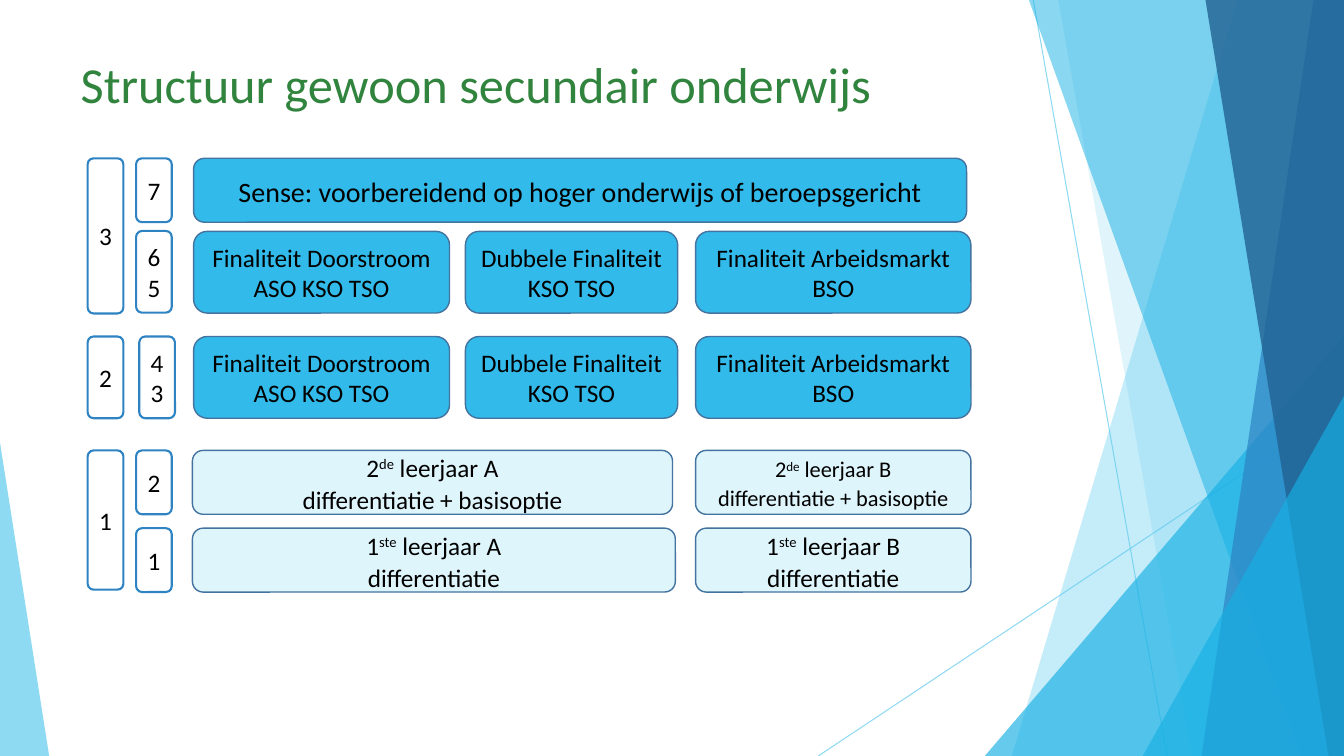
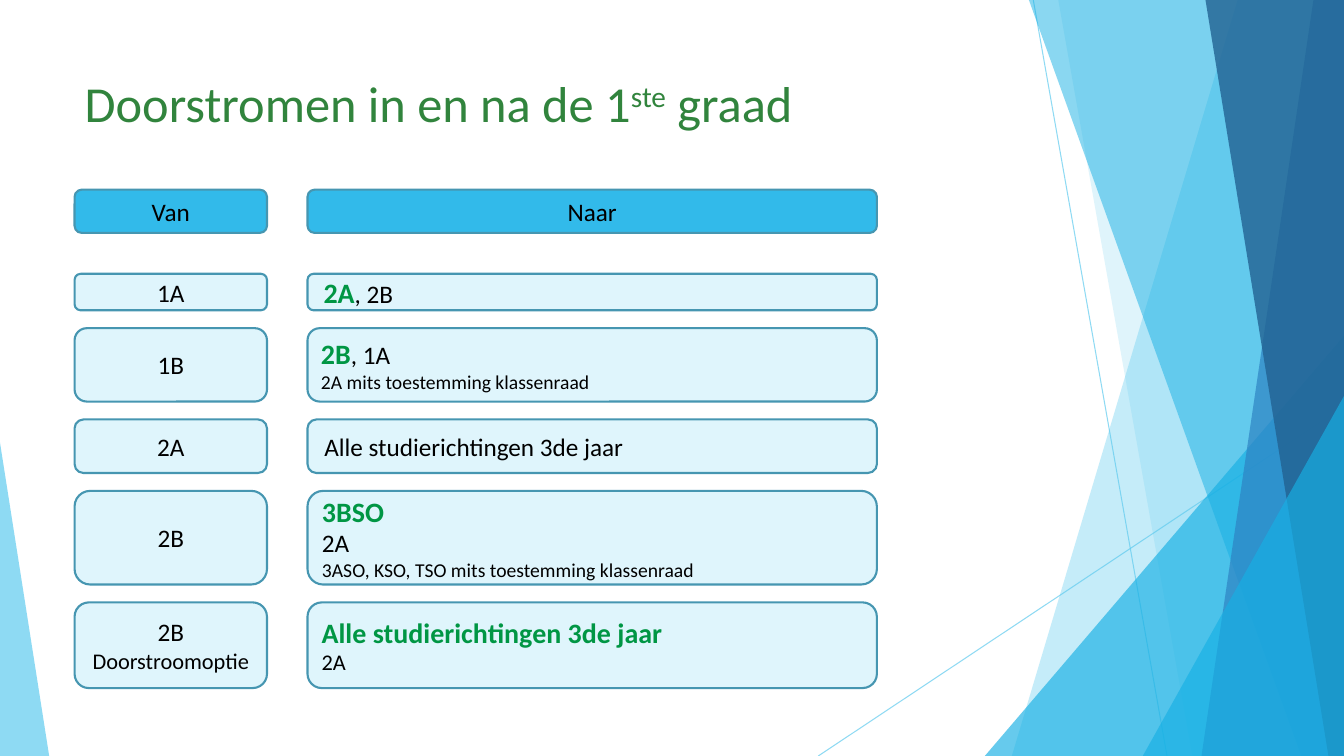
from lxml import etree
from pptx import Presentation
from pptx.dml.color import RGBColor
from pptx.enum.shapes import MSO_CONNECTOR, MSO_SHAPE
from pptx.enum.text import MSO_ANCHOR, PP_ALIGN
from pptx.oxml.ns import qn
from pptx.util import Cm, Pt

ROUND = MSO_SHAPE.ROUNDED_RECTANGLE
ALT = MSO_SHAPE.FLOWCHART_ALTERNATE_PROCESS
TRI = MSO_SHAPE.ISOSCELES_TRIANGLE
LINE = MSO_CONNECTOR.STRAIGHT
LEFT, MID = PP_ALIGN.LEFT, PP_ALIGN.CENTER
TOP, CENTRE = MSO_ANCHOR.TOP, MSO_ANCHOR.MIDDLE

FONT = "Calibri"
WIDE, HIGH = 33.87, 19.05  # slide size in cm

BLACK = RGBColor(0x00, 0x00, 0x00)
WHITE = RGBColor(0xFF, 0xFF, 0xFF)
MOSS = RGBColor(0x31, 0x84, 0x3D)
GREEN = RGBColor(0x00, 0x96, 0x44)
SKY = RGBColor(0x32, 0xBA, 0xEA)
PALE = RGBColor(0xDF, 0xF5, 0xFC)
SLATE = RGBColor(0x43, 0x73, 0x9E)
TEAL = RGBColor(0x46, 0x96, 0xB1)
BLUE = RGBColor(0x2E, 0x83, 0xC3)
AQUA = RGBColor(0x5F, 0xCB, 0xEF)
CYAN = RGBColor(0x17, 0xB0, 0xE4)
NAVY = RGBColor(0x22, 0x62, 0x92)

# Text styles: size, colour, bold
HEAD = (36, MOSS, False)
LEAD = (20, GREEN, True)
LARGE = (20, BLACK, False)
BODY = (18, BLACK, False)
SMALL = (16, BLACK, False)
NOTE = (14, BLACK, False)

# Box looks: fill, line colour, line width
STRONG = (SKY, SLATE, 1)
LIGHT = (PALE, SLATE, 1)
GRADE = (WHITE, BLUE, 1.5)
TITLE = (SKY, TEAL, 1.5)
CELL = (PALE, TEAL, 1.5)


# Text
def write(par, text, style):
    """Add text; ^ marks the start and end of a superscript."""
    size, colour, bold = style
    for i, part in enumerate(text.split("^")):
        for j, piece in enumerate(part.split("\n")):
            if j:
                par.add_line_break()
            run = par.add_run()
            run.text = piece
            font = run.font
            font.name, font.size, font.bold = FONT, Pt(size), bold
            font.color.rgb = colour
            if i % 2:
                font._element.set("baseline", "30000")


def fill(frame, lines, align=MID, space=None):
    """Each line is a list of (text, style) parts."""
    for i, line in enumerate(lines):
        par = frame.add_paragraph() if i else frame.paragraphs[0]
        par.alignment = align
        if space:
            par.line_spacing = space
        for text, style in line:
            write(par, text, style)


def head(slide, text, x, y, w, h):
    shape = slide.shapes.title
    shape.left, shape.top, shape.width, shape.height = map(Cm, (x, y, w, h))
    frame = shape.text_frame
    frame.vertical_anchor, frame.word_wrap = TOP, True
    fill(frame, [[(text, HEAD)]], LEFT)


# Boxes
def box(slide, spot, look, lines, kind=ROUND, align=MID, space=None):
    shape = slide.shapes.add_shape(kind, *map(Cm, spot))
    shape.shadow.inherit = False
    shape.fill.solid()
    shape.fill.fore_color.rgb, shape.line.color.rgb = look[:2]
    shape.line.width = Pt(look[2])
    frame = shape.text_frame
    frame.word_wrap, frame.vertical_anchor = True, CENTRE
    fill(frame, lines, align, space)
    return frame


def tight(slide, spot, look, lines, **more):
    frame = box(slide, spot, look, lines, **more)
    frame.margin_left = frame.margin_right = Cm(0.18)
    frame.margin_top = frame.margin_bottom = Cm(0.1)


# Shared backdrop
def fade(shape, share):
    for node in shape.element.iter(qn("a:srgbClr")):
        etree.SubElement(node, qn("a:alpha")).set("val", str(share * 1000))


def tint(shape, colour, share):
    shape.shadow.inherit = False
    shape.fill.solid()
    shape.fill.fore_color.rgb = colour
    shape.line.fill.background()
    fade(shape, share)


def ray(shapes, *ends):
    line = shapes.add_connector(LINE, *map(Cm, ends))
    line.line.color.rgb = AQUA
    line.line.width = Pt(0.75)
    fade(line, 70)
    etree.SubElement(line.element.spPr, qn("a:effectLst"))


def band(shapes, top, foot, colour, share):
    """A strip from a slanted left edge to the right of the slide."""
    path = shapes.build_freeform(Cm(top), 0)
    path.add_line_segments(
        [(Cm(x), Cm(y)) for x, y in ((WIDE, 0), (WIDE, HIGH), (foot, HIGH))]
    )
    tint(path.convert_to_shape(), colour, share)


def wedge(shapes, x, y, w, tip, colour, share):
    shape = shapes.add_shape(TRI, Cm(x), Cm(y), Cm(w), Cm(HIGH - y))
    shape.adjustments[0] = tip
    tint(shape, colour, share)


def backdrop(slide):
    """Draw the facets once and hand them to the layout."""
    group = slide.shapes.add_group_shape()
    shapes = group.shapes
    ray(shapes, 26.04, 0, 29.41, HIGH)
    ray(shapes, WIDE, 10.24, 20.62, HIGH)
    band(shapes, 31.19, 25.5, AQUA, 36)
    band(shapes, 26.67, 30.05, AQUA, 20)
    wedge(shapes, 24.82, 8.46, WIDE - 24.82, 1, CYAN, 66)
    band(shapes, 25.93, 32.79, CYAN, 50)
    band(shapes, 33.1, 30.28, BLUE, 70)
    band(shapes, 30.38, 33.48, NAVY, 80)
    wedge(shapes, 28.8, 9.98, WIDE - 28.8, 1, CYAN, 66)
    wedge(shapes, 0, 11.15, 1.24, 0, AQUA, 70)
    for i, node in enumerate(group.element.iter(qn("p:cNvPr")), 20):
        node.set("id", str(i))
    slide.slide_layout.shapes.element.insert(2, group.element)


# Slide 1
def structure(slide):
    head(slide, "Structuur gewoon secundair onderwijs", 1.78, 1.22, 21.95, 2.77)

    # Stages and years on the left
    for text, y, h in (("3", 3.99, 3.91), ("2", 8.48, 2.06), ("1", 11.35, 3.51)):
        tight(slide, (2.21, y, 0.9, h), GRADE, [[(text, BODY)]], kind=ALT)
    low, tall = 1.61, 2.06
    years = (
        ("7", 3.43, 3.99, low), ("6\n5", 3.43, 5.82, tall),
        ("4\n3", 3.51, 8.48, tall),
        ("2", 3.43, 11.35, low), ("1", 3.43, 13.31, low),
    )
    for text, x, y, h in years:
        tight(slide, (x, y, 0.9, h), GRADE, [[(text, BODY)]])

    # Upper stages
    sense = "Sense: voorbereidend op hoger onderwijs of beroepsgericht"
    tight(slide, (4.88, 3.99, 19.48, low), STRONG, [[(sense, LARGE)]], space=1.07)
    goals = (
        ("Finaliteit Doorstroom", "ASO KSO TSO", 4.88, 6.45),
        ("Dubbele Finaliteit", "KSO TSO", 11.73, 5.35),
        ("Finaliteit Arbeidsmarkt", "BSO", 17.53, 6.94),
    )
    for y in (5.83, 8.48):
        for name, kinds, x, w in goals:
            lines = [[(name, BODY)], [(kinds.replace(" ", " "), BODY)]]
            tight(slide, (x, y, w, tall), STRONG, lines)

    # First stage
    second = "2^de^ leerjaar {}\ndifferentiatie + basisoptie"
    first = "1^ste^ leerjaar {}\ndifferentiatie"
    rows = ((second, 11.35, 12.1, SMALL), (first, 13.31, 12.17, BODY))
    for text, y, wide, style in rows:
        for mark, x, w, form in (("A", 4.85, wide, BODY), ("B", 17.53, 6.94, style)):
            lines = [[(text.format(mark), form)]]
            tight(slide, (x, y, w, low), LIGHT, lines, space=1.07)


# Slide 2
def moves(slide):
    head(slide, "Doorstromen in en na de 1^ste^ graad", 1.88, 1.7, 23.88, 2.36)
    start, goal = (1.88, 4.85), (7.75, 14.35)  # left and width
    for text, (x, w) in (("Van", start), ("Naar", goal)):
        box(slide, (x, 4.78, w, 1.09), TITLE, [[(text, BODY)]])

    # Height, inset, from, to
    rows = (
        (0.92, 0.36, [[("1A", BODY)]], [[("2A", LEAD), (", 2B", BODY)]]),
        (1.85, 0.25, [[("1B", BODY)]],
         [[("2B", LEAD), (", 1A", BODY)],
          [("2A mits toestemming klassenraad", NOTE)]]),
        (1.35, 0.36, [[("2A", BODY)]],
         [[("Alle studierichtingen 3de jaar", BODY)]]),
        (2.36, 0.25, [[("2B", BODY)]],
         [[("3BSO", LEAD)], [("2A", BODY)],
          [("3ASO, KSO, TSO mits toestemming klassenraad", NOTE)]]),
        (2.16, 0.25, [[("2B", BODY)], [("Doorstroomoptie", SMALL)]],
         [[("Alle studierichtingen 3de jaar", LEAD)], [("2A", SMALL)]]),
    )
    y, gap = 6.9, 0.45
    for h, inset, source, target in rows:
        box(slide, (start[0], y, start[1], h), CELL, source)
        frame = box(slide, (goal[0], y, goal[1], h), CELL, target, align=LEFT)
        frame.margin_left = Cm(inset)
        y += h + gap


def main():
    deck = Presentation()
    deck.slide_width, deck.slide_height = Cm(WIDE), Cm(HIGH)
    layout = deck.slide_layouts[5]
    for i, build in enumerate((structure, moves)):
        slide = deck.slides.add_slide(layout)
        if i == 0:
            backdrop(slide)
        build(slide)
    deck.save("out.pptx")


if __name__ == "__main__":
    main()
